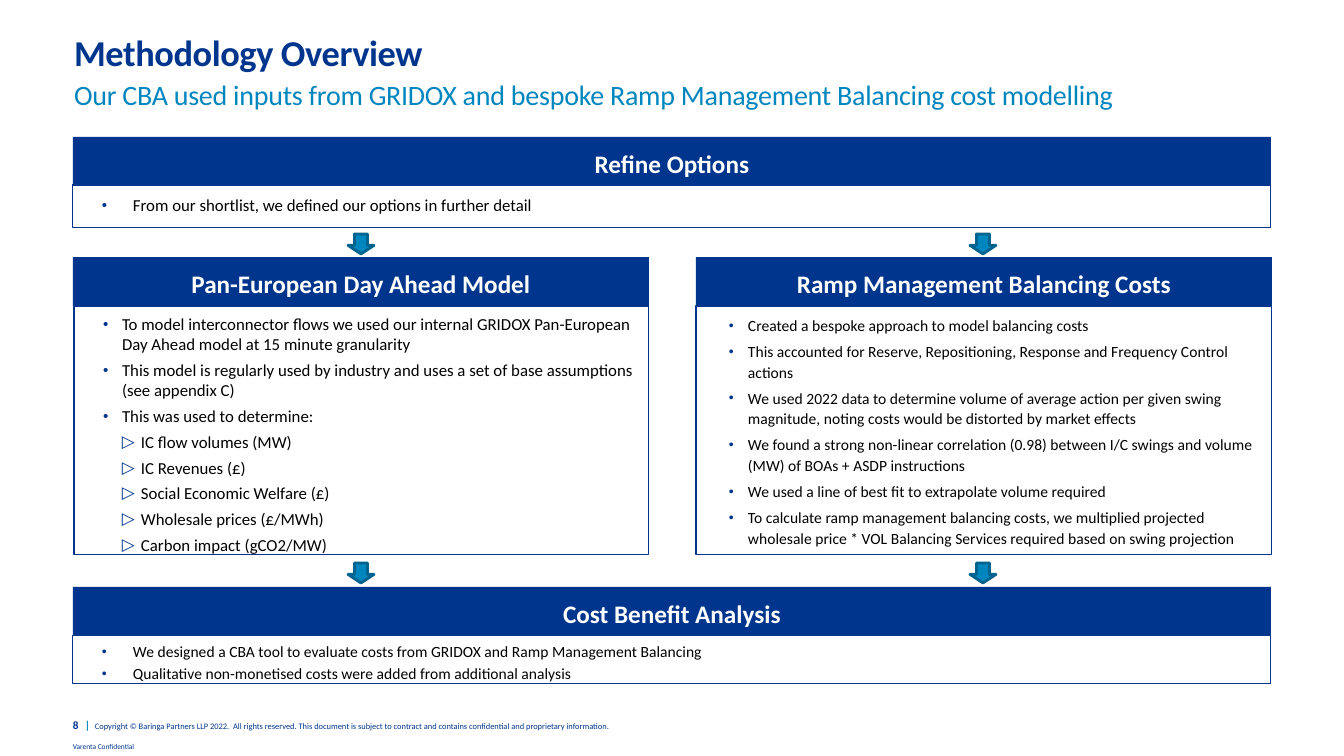
from lxml.etree import SubElement
from pptx import Presentation
from pptx.dml.color import RGBColor
from pptx.enum.shapes import MSO_SHAPE
from pptx.enum.text import MSO_ANCHOR, MSO_AUTO_SIZE, PP_ALIGN
from pptx.oxml.ns import qn
from pptx.util import Pt

EMU_PER_PX = 914400 / 100.8
FONT = "Calibri"
COLORS = {
    "navy": "00358E",
    "teal": "0086BF",
    "arrow_edge": "00638D",
    "white": "FFFFFF",
    "black": "000000",
}

DAY_AHEAD = [
    "To model interconnector flows we used our internal GRIDOX Pan-European "
    "Day Ahead model at 15 minute granularity",
    "This model is regularly used by industry and uses a set of base assumptions (see appendix C)",
    "This was used to determine:",
]
DAY_AHEAD_OUTPUTS = [
    "IC flow volumes (MW)",
    "IC Revenues (£)",
    "Social Economic Welfare (£)",
    "Wholesale prices (£/MWh)",
    "Carbon impact (gCO2/MW)",
]
BALANCING = [
    "Created a bespoke approach to model balancing costs",
    "This accounted for Reserve, Repositioning, Response and Frequency Control actions",
    "We used 2022 data to determine volume of average action per given swing magnitude, "
    "noting costs would be distorted by market effects",
    "We found a strong non-linear correlation (0.98) between I/C swings and volume (MW) "
    "of BOAs + ASDP instructions",
    "We used a line of best fit to extrapolate volume required",
    "To calculate ramp management balancing costs, we multiplied projected wholesale price "
    "* VOL Balancing Services required based on swing projection",
]
COST_BENEFIT = [
    "We designed a CBA tool to evaluate costs from GRIDOX and Ramp Management Balancing",
    "Qualitative non-monetised costs were added from additional analysis",
]
COPYRIGHT = (
    "Copyright © Baringa Partners LLP 2022.  All rights reserved. This document is "
    "subject to contract and contains confidential and proprietary information."
)


def px(value):
    return round(value * EMU_PER_PX)


def rgb(name):
    return RGBColor.from_string(COLORS[name])


def place(shape, left, top, width, height):
    shape.left, shape.top = px(left), px(top)
    shape.width, shape.height = px(width), px(height)
    return shape


def prepare_frame(shape, anchor=MSO_ANCHOR.TOP, left=0, top=0):
    frame = shape.text_frame
    frame.auto_size = MSO_AUTO_SIZE.NONE
    frame.word_wrap = True
    frame.vertical_anchor = anchor
    frame.margin_left, frame.margin_top = px(left), px(top)
    frame.margin_right = frame.margin_bottom = 0
    return frame


def add_run(paragraph, text, size=12, color="black", bold=False, spacing=0):
    run = paragraph.add_run()
    run.text = text
    run.font.name, run.font.size, run.font.bold = FONT, Pt(size), bold
    run.font.color.rgb = rgb(color)
    if spacing:
        run.font._element.set("spc", str(round(spacing * 100)))


def set_bullet(paragraph, character, indent, hanging):
    properties = paragraph._p.get_or_add_pPr()
    properties.set("marL", str(px(indent)))
    properties.set("indent", str(-px(hanging)))
    if not character:
        SubElement(properties, qn("a:buNone"))
        return
    color = SubElement(properties, qn("a:buClr"))
    SubElement(color, qn("a:srgbClr"), val=COLORS["navy"])
    SubElement(properties, qn("a:buSzPct"), val="90000" if character == "•" else "100000")
    SubElement(properties, qn("a:buFont"), typeface="Arial")
    SubElement(properties, qn("a:buChar"), char=character)


def add_paragraph(frame, text, align=PP_ALIGN.LEFT, line=1.0, bullet=None,
                  indent=0, hanging=0, level=0, **run_format):
    first = not frame.paragraphs[0].runs
    paragraph = frame.paragraphs[0] if first else frame.add_paragraph()
    paragraph.level = level
    set_bullet(paragraph, bullet, indent, hanging)
    paragraph.alignment, paragraph.line_spacing = align, line
    paragraph.space_before, paragraph.space_after = Pt(0 if first else 4), Pt(0)
    add_run(paragraph, text, **run_format)
    return paragraph


def add_box(slide, kind=MSO_SHAPE.RECTANGLE):
    shape = slide.shapes.add_shape(kind, 0, 0, 0, 0)
    shape.shadow.inherit = False
    return shape


def format_header(shape, text, *area):
    place(shape, *area)
    shape.fill.solid()
    shape.fill.fore_color.rgb = rgb("navy")
    shape.line.fill.background()
    frame = prepare_frame(shape, MSO_ANCHOR.MIDDLE)
    add_paragraph(frame, text, PP_ALIGN.CENTER, 1.1, size=18, color="white", bold=True)


def format_list(shape, items, *area, **text_format):
    place(shape, *area)
    shape.fill.background()
    shape.line.color.rgb = rgb("navy")
    shape.line.width = Pt(0.75)
    frame = prepare_frame(shape, top=8)
    for item in items:
        add_paragraph(frame, item, bullet="•", **text_format)
    return frame


def add_arrow(slide, left, top):
    arrow = place(add_box(slide, MSO_SHAPE.DOWN_ARROW), left, top, 26, 20)
    arrow.adjustments[1] = 0.43
    arrow.fill.solid()
    arrow.fill.fore_color.rgb = rgb("teal")
    arrow.line.color.rgb = rgb("arrow_edge")
    arrow.line.width = Pt(2)


def add_label(slide, *area, **margins):
    return prepare_frame(place(slide.shapes.add_textbox(0, 0, 0, 0), *area), **margins)


def add_footer(slide):
    frame = add_label(slide, 73, 718, 734, 27)
    paragraph = frame.paragraphs[0]
    tabs = SubElement(paragraph._p.get_or_add_pPr(), qn("a:tabLst"))
    for stop in (12, 22):
        SubElement(tabs, qn("a:tab"), pos=str(px(stop)), algn="l")
    add_run(paragraph, "8\t", size=8, color="navy", bold=True)
    add_run(paragraph, "|\t", size=8, color="teal", bold=True)
    add_run(paragraph, COPYRIGHT, size=6, color="navy")
    label = add_label(slide, 68, 739, 90, 17, left=5, top=3)
    add_paragraph(label, "Varenta Confidential", size=5.3, color="navy")


def main():
    presentation = Presentation()
    presentation.slide_width, presentation.slide_height = px(1344), px(756)
    slide = presentation.slides.add_slide(presentation.slide_layouts[4])
    title, left_header, left_list, right_header, right_list = slide.placeholders

    # Title and subtitle
    title_frame = prepare_frame(place(title, 74, 39, 1197, 36))
    add_paragraph(title_frame, "Methodology Overview", line=0.8, size=26,
                  color="navy", bold=True, spacing=-0.3)
    subtitle = add_label(slide, 74, 73, 1197, 39, top=8)
    add_paragraph(subtitle, "Our CBA used inputs from GRIDOX and bespoke Ramp Management "
                  "Balancing cost modelling", line=0.9, size=20, color="teal", spacing=-0.2)

    # Two models side by side
    format_list(right_list, BALANCING, 696, 306, 576, 249,
                line=1.1, indent=52, hanging=19, size=11.1)
    day_ahead = format_list(left_list, DAY_AHEAD, 74, 306, 575, 249, indent=48, hanging=19)
    for output in DAY_AHEAD_OUTPUTS:
        add_paragraph(day_ahead, output, bullet="▷", indent=67, hanging=19, level=1)
    format_header(left_header, "Pan-European Day Ahead Model", 73, 257, 576, 49)
    format_header(right_header, "Ramp Management Balancing Costs", 696, 257, 576, 49)

    # Full-width steps above and below
    wide = {"indent": 60, "hanging": 31}
    format_list(add_box(slide), ["From our shortlist, we defined our options in further detail"],
                73, 185, 1198, 43, line=1.1, **wide)
    format_header(add_box(slide), "Refine Options", 73, 137, 1198, 49)
    format_list(add_box(slide), COST_BENEFIT, 73, 636, 1198, 48, line=0.9, size=11.1, **wide)
    format_header(add_box(slide), "Cost Benefit Analysis", 73, 587, 1198, 49)

    # Flow arrows
    for top in (234, 563):
        for left in (348, 970):
            add_arrow(slide, left, top)

    add_footer(slide)
    presentation.save("out.pptx")


if __name__ == "__main__":
    main()
